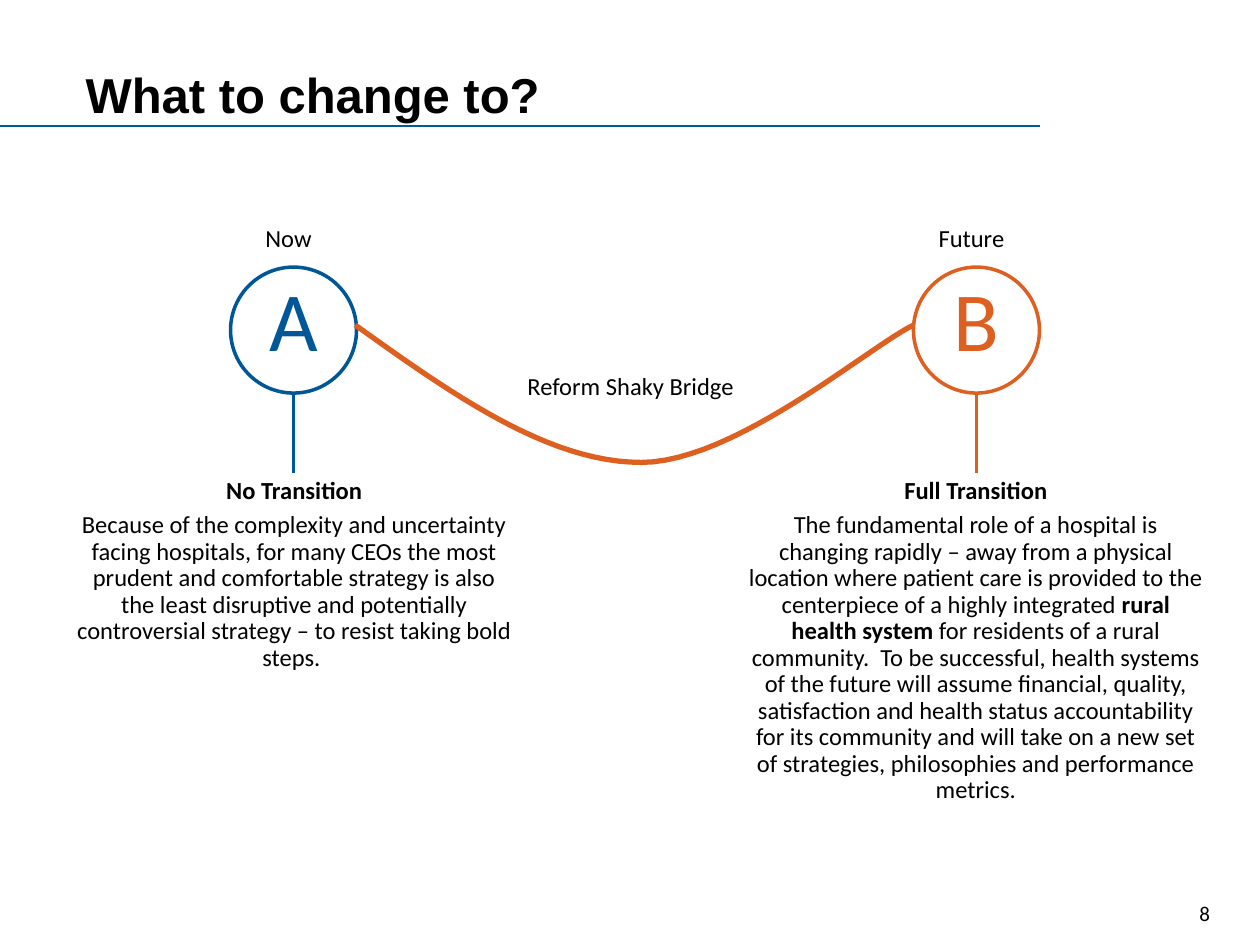
"""Build the slide showing the shaky bridge from the present to the future."""
import lxml.etree
import pptx
import pptx.dml.color
import pptx.enum.shapes
import pptx.enum.text
import pptx.oxml.ns
import pptx.util

Inches = pptx.util.Inches
Pt = pptx.util.Pt
rgb = pptx.dml.color.RGBColor.from_string
Align = pptx.enum.text.PP_ALIGN
Anchor = pptx.enum.text.MSO_ANCHOR
qn = pptx.oxml.ns.qn

THEME = {
    "ink": rgb("000000"), "paper": rgb("FFFFFF"), "rule": rgb("005B99"),
    "now": rgb("005797"), "future": rgb("DE6021"),
    "title": Pt(28), "letter": Pt(48), "text": Pt(14), "number": Pt(12),
}
FRAME = {"word_wrap": True, "auto_size": pptx.enum.text.MSO_AUTO_SIZE.NONE,
         "vertical_anchor": Anchor.TOP}
CENTERED = {"alignment": Align.CENTER, "line_spacing": 0.9}
LEFT = {"alignment": Align.LEFT, "line_spacing": 1.0}


def write(shape, paragraphs, size="text", color="ink", face="Calibri", layout=CENTERED, **frame):
    """Fill a shape with paragraphs given as lists of (text, bold) pairs."""
    for name, value in {**FRAME, **frame}.items():
        setattr(shape.text_frame, name, value)
    for number, runs in enumerate(paragraphs):
        paragraph = shape.text_frame.paragraphs[0] if number == 0 else shape.text_frame.add_paragraph()
        properties = paragraph._p.get_or_add_pPr()
        properties.set("marL", "0")
        properties.set("indent", "0")
        lxml.etree.SubElement(properties, qn("a:buNone"))
        for name, value in {**layout, "space_before": Pt(4.2 if number else 0)}.items():
            setattr(paragraph, name, value)
        for text, bold in runs:
            run = paragraph.add_run()
            run.text = text
            for name, value in {"name": face, "size": THEME[size], "bold": bold}.items():
                setattr(run.font, name, value)
            run.font.color.rgb = THEME[color]


def draw_line(start, end, color, width):
    """Draw a straight line without a shadow."""
    line = slide.shapes.add_connector(pptx.enum.shapes.MSO_CONNECTOR.STRAIGHT,
                                      *map(Inches, start + end))
    line.line.color.rgb = THEME[color]
    line.line.width = Pt(width)
    lxml.etree.SubElement(line._element.spPr, qn("a:effectLst"))


deck = pptx.Presentation()
deck.slide_width, deck.slide_height = Inches(10), Inches(7.5)
slide = deck.slides.add_slide(deck.slide_layouts[3])
heading, now_story, future_story = slide.placeholders

draw_line((0, 1), (8.25, 1), "rule", 0.75)
for part, place in ((heading, (0.58, 0.41, 7.25, 0.5)),
                    (now_story, (0.5, 3.75, 3.67, 2.83)),
                    (future_story, (5.83, 3.75, 3.83, 2.33))):
    for side, length in zip(("left", "top", "width", "height"), place):
        setattr(part, side, Inches(length))

write(heading, [[("What to change to?", True)]], "title", face="Arial", layout=LEFT,
      margin_top=Inches(0.1))
write(now_story, [
    [("No Transition", True)],
    [("Because of the complexity and uncertainty facing hospitals, for many CEOs the most "
      "prudent and comfortable strategy is also the least disruptive and potentially "
      "controversial strategy – to resist taking bold steps. ", False)],
])
write(future_story, [
    [("Full Transition", True)],
    [("The fundamental role of a hospital is changing rapidly – away from a physical location "
      "where patient care is provided to the centerpiece of a highly integrated ", False),
     ("rural health system ", True),
     ("for residents of a rural community.  To be successful, health systems of the future "
      "will assume financial, quality, satisfaction and health status accountability for its "
      "community and will take on a new set of strategies, philosophies and performance "
      "metrics.", False)],
])

for letter, color, left in (("A", "now", 1.83), ("B", "future", 7.25)):
    stage = slide.shapes.add_shape(pptx.enum.shapes.MSO_SHAPE.OVAL,
                                   Inches(left), Inches(2.12), Inches(1), Inches(1))
    stage.shadow.inherit = False
    stage.fill.solid()
    stage.fill.fore_color.rgb = THEME["paper"]
    stage.line.color.rgb = THEME[color]
    stage.line.width = Pt(2)
    write(stage, [[(letter, False)]], "letter", color,
          layout={**CENTERED, "line_spacing": 1.0}, vertical_anchor=Anchor.BOTTOM)
    draw_line((left + 0.5, 3.13), (left + 0.5, 3.75), color, 2)

bridge_halves = [
    ((2.82, 2.58), (3.59, 3.13), (4.35, 3.67), (5.09, 3.67)),
    ((5.09, 3.67), (5.83, 3.67), (6.9, 2.75), (7.25, 2.58)),
]
steps = 24
bridge_points = []
for half in bridge_halves:
    for step in range(1, steps + 1):
        t = step / steps
        weights = ((1 - t) ** 3, 3 * t * (1 - t) ** 2, 3 * t ** 2 * (1 - t), t ** 3)
        bridge_points.append(tuple(Inches(sum(w * p[axis] for w, p in zip(weights, half)))
                                   for axis in (0, 1)))
outline = slide.shapes.build_freeform(*map(Inches, bridge_halves[0][0]))
outline.add_line_segments(bridge_points, close=False)
bridge = outline.convert_to_shape()
bridge.shadow.inherit = False
bridge.fill.solid()
bridge.fill.fore_color.rgb = THEME["paper"]
bridge.line.color.rgb = THEME["future"]
bridge.line.width = Pt(3)

for caption, left, top, width in (("Reform Shaky Bridge", 3.17, 2.92, 3.67),
                                  ("Now", 1.58, 1.75, 1.42), ("Future", 7, 1.75, 1.42)):
    label = slide.shapes.add_textbox(Inches(left), Inches(top), Inches(width), Inches(0.33))
    write(label, [[(caption, False)]])

page_number = slide.shapes.add_textbox(Inches(9.42), Inches(7.1), Inches(0.58), Inches(0.4))
write(page_number, [[("8", False)]], "number", layout=LEFT)

deck.save("out.pptx")
